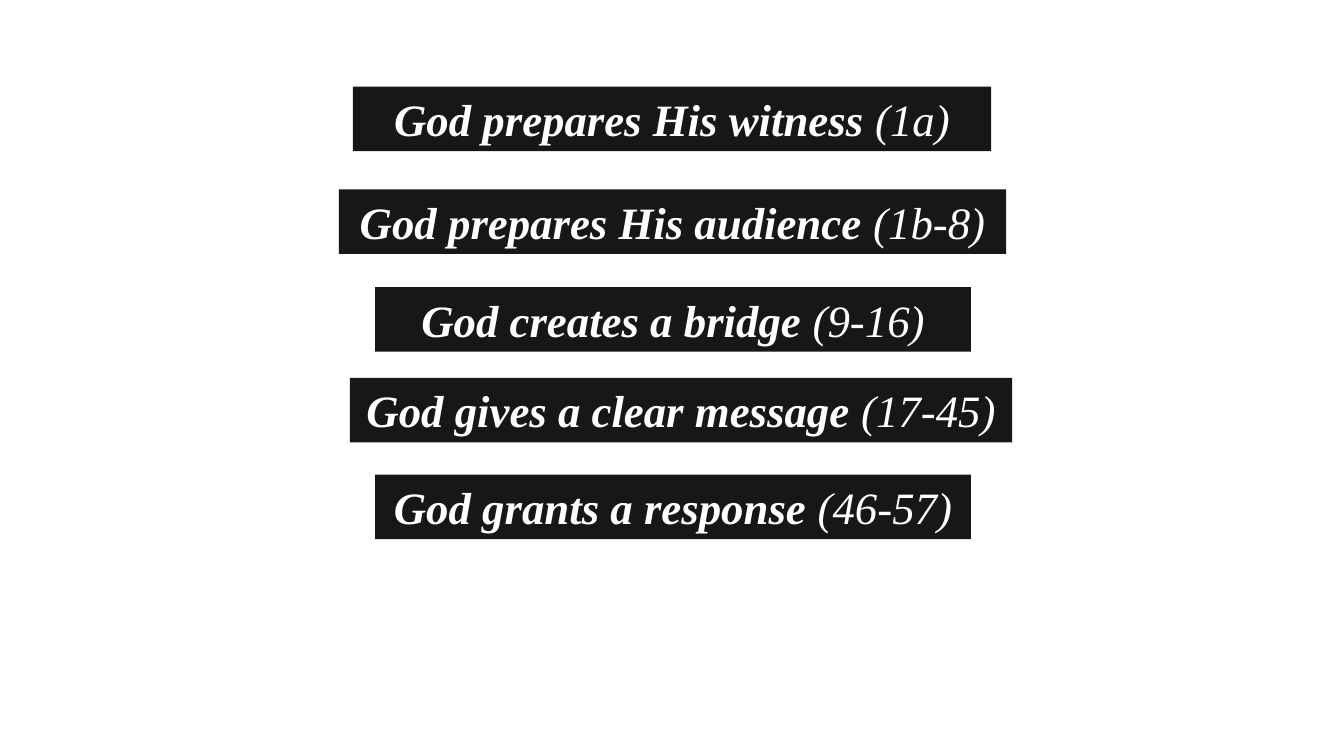
from dataclasses import dataclass

from pptx import Presentation
from pptx.dml.color import RGBColor
from pptx.enum.shapes import MSO_SHAPE
from pptx.enum.text import MSO_ANCHOR, MSO_AUTO_SIZE, PP_ALIGN
from pptx.util import Inches, Pt

RECT = MSO_SHAPE.RECTANGLE
TOP = MSO_ANCHOR.TOP
GROW = MSO_AUTO_SIZE.SHAPE_TO_FIT_TEXT
CENTER = PP_ALIGN.CENTER


@dataclass(frozen=True)
class Theme:
    bar: RGBColor = RGBColor(0x17, 0x17, 0x17)
    text: RGBColor = RGBColor(0xFF, 0xFF, 0xFF)
    font: str = "Times New Roman"
    size: int = 32


THEME = Theme()
BAR_HEIGHT = 0.64
POINTS = [
    ("God prepares His witness ", "(1a)", 3.5, 0.86, 6.33),
    ("God prepares His audience ", "(1b-8)", 3.36, 1.88, 6.62),
    ("God creates a bridge ", "(9-16)", 3.72, 2.85, 5.91),
    ("God gives a clear message ", "(17-45)", 3.47, 3.75, 6.57),
    ("God grants a response ", "(46-57)", 3.72, 4.71, 5.91),
]


def add_run(p, text, bold):
    r = p.add_run()
    r.text = text
    formats = {"name": THEME.font, "size": Pt(THEME.size), "bold": bold, "italic": True}
    for name, value in formats.items():
        setattr(r.font, name, value)
    r.font.color.rgb = THEME.text


def add_point(s, box, point, verses):
    sp = s.shapes.add_shape(RECT, *map(Inches, box))
    sp.shadow.inherit = False
    sp.fill.solid()
    sp.fill.fore_color.rgb = THEME.bar
    sp.line.fill.background()
    tf = sp.text_frame
    formats = {"word_wrap": True, "auto_size": GROW, "vertical_anchor": TOP}
    for name, value in formats.items():
        setattr(tf, name, value)
    p = tf.paragraphs[0]
    p.alignment = CENTER
    add_run(p, point, True)
    add_run(p, verses, False)


def main():
    prs = Presentation()
    prs.slide_width, prs.slide_height = Inches(13.33), Inches(7.5)
    s = prs.slides.add_slide(prs.slide_layouts[6])
    for point, verses, left, top, width in POINTS:
        add_point(s, (left, top, width, BAR_HEIGHT), point, verses)
    prs.save("out.pptx")


if __name__ == "__main__":
    main()
